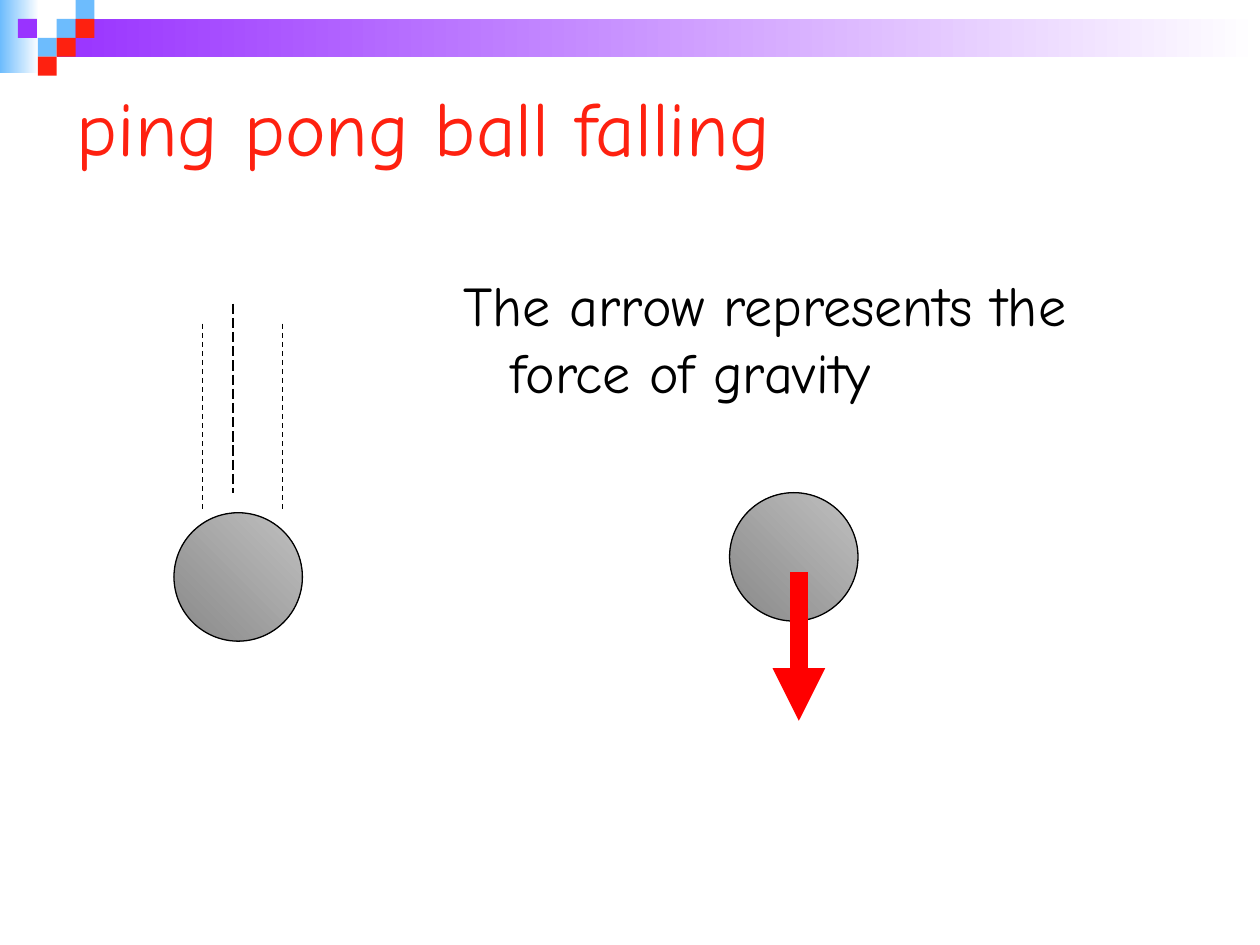
import pptx
import pptx.dml.color
import pptx.enum.dml
import pptx.enum.shapes
import pptx.enum.text
import pptx.oxml
import pptx.oxml.ns
import pptx.util

Pt = pptx.util.Pt
SHAPE = pptx.enum.shapes.MSO_SHAPE
DASH = pptx.enum.dml.MSO_LINE

FONT = "Comic Neue"
BLUE, PURPLE, RED = "6DBCFD", "9933FF", "FE2110"
WHITE, BLACK, ARROW_RED = "FFFFFF", "000000", "FF0000"
BALL_DARK, BALL_LIGHT = "898989", "C0C0C0"
CELL = 10.8
BALL_SIZE = 73.4


def color(hex_text):
    return pptx.dml.color.RGBColor.from_string(hex_text)


def add_shape(slide, kind, left, top, width, height, colors, angle=0):
    """One colour gives a solid fill, two give a linear gradient."""
    shape = slide.shapes.add_shape(kind, Pt(left), Pt(top), Pt(width), Pt(height))
    shape.shadow.inherit = False
    shape.line.fill.background()
    if len(colors) == 1:
        shape.fill.solid()
        shape.fill.fore_color.rgb = color(colors[0])
    else:
        shape.fill.gradient()
        shape.fill.gradient_angle = angle
        for stop, hex_text in zip(shape.fill.gradient_stops, colors):
            stop.color.rgb = color(hex_text)
    return shape


def add_ball(slide, left, top):
    ball = add_shape(slide, SHAPE.OVAL, left, top, BALL_SIZE, BALL_SIZE,
                     [BALL_DARK, BALL_LIGHT], angle=45)
    ball.line.color.rgb = color(BLACK)
    ball.line.width = Pt(0.75)


def add_vertical_line(slide, x, top, length, hex_text, width, dash=None):
    line = slide.shapes.add_connector(
        pptx.enum.shapes.MSO_CONNECTOR.STRAIGHT, Pt(x), Pt(top), Pt(x), Pt(top + length))
    line.line.color.rgb = color(hex_text)
    line.line.width = Pt(width)
    if dash is not None:
        line.line.dash_style = dash
    properties = line._element.spPr
    properties.append(pptx.oxml.parse_xml(
        f'<a:effectLst {pptx.oxml.ns.nsdecls("a")}/>'))
    return line


def add_arrow_down(slide, x, top, length):
    arrow = add_vertical_line(slide, x, top, length, ARROW_RED, 10)
    arrow.get_or_add_ln().append(pptx.oxml.parse_xml(
        f'<a:tailEnd {pptx.oxml.ns.nsdecls("a")} type="triangle"/>'))


def format_text(para, size, hex_text):
    para.alignment = pptx.enum.text.PP_ALIGN.LEFT
    for span in para.runs:
        span.font.name = FONT
        span.font.size = Pt(size)
        span.font.color.rgb = color(hex_text)


def add_header_band(slide):
    add_shape(slide, SHAPE.RECTANGLE, 0, 0, 22.3, 41.8, [BLUE, WHITE])
    add_shape(slide, SHAPE.RECTANGLE, 3 * CELL, CELL, 687.6, 2 * CELL, [PURPLE, WHITE])
    checkers = [(3, 1, BLUE), (4, 0, BLUE), (4, 1, RED), (2, 2, BLUE),
                (0.95, 1, PURPLE), (3, 2, RED), (2, 3, RED)]
    for column, row, hex_text in checkers:
        add_shape(slide, SHAPE.RECTANGLE, column * CELL, row * CELL, CELL, CELL, [hex_text])


def set_title(slide, text):
    title = slide.shapes.title
    title.left, title.top, title.width, title.height = Pt(36.7), Pt(37.4), Pt(648), Pt(68.4)
    frame = title.text_frame
    frame.text = text
    frame.auto_size = pptx.enum.text.MSO_AUTO_SIZE.NONE
    frame.vertical_anchor = pptx.enum.text.MSO_ANCHOR.MIDDLE
    format_text(frame.paragraphs[0], 44, RED)


def add_body(slide, text):
    box = slide.shapes.add_textbox(Pt(257.8), Pt(151.2), Pt(421.2), Pt(362.9))
    frame = box.text_frame
    frame.word_wrap = True
    frame.text = text
    para = frame.paragraphs[0]
    para.space_before = Pt(6.4)
    format_text(para, 32, BLACK)
    indents = para._p.get_or_add_pPr()
    indents.set("marL", str(Pt(27)))
    indents.set("indent", str(-Pt(27)))


def add_falling_ball(slide):
    add_ball(slide, 99.4, 293)
    add_vertical_line(slide, 133.2, 173.5, 108, BLACK, 0.75, DASH.LONG_DASH)
    for x in (161.3, 115.9):
        add_vertical_line(slide, x, 185, 108, BLACK, 0.75, DASH.DASH)


def add_ball_with_gravity(slide):
    add_ball(slide, 416.9, 281.5)
    add_arrow_down(slide, 456.5, 326.9, 85)


def main():
    deck = pptx.Presentation()
    deck.slide_width, deck.slide_height = Pt(720), Pt(540)
    slide = deck.slides.add_slide(deck.slide_layouts.get_by_name("Title Only"))
    add_header_band(slide)
    set_title(slide, "ping pong ball falling")
    add_body(slide, "The arrow represents the force of gravity")
    add_ball_with_gravity(slide)
    add_falling_ball(slide)
    deck.save("out.pptx")


if __name__ == "__main__":
    main()
